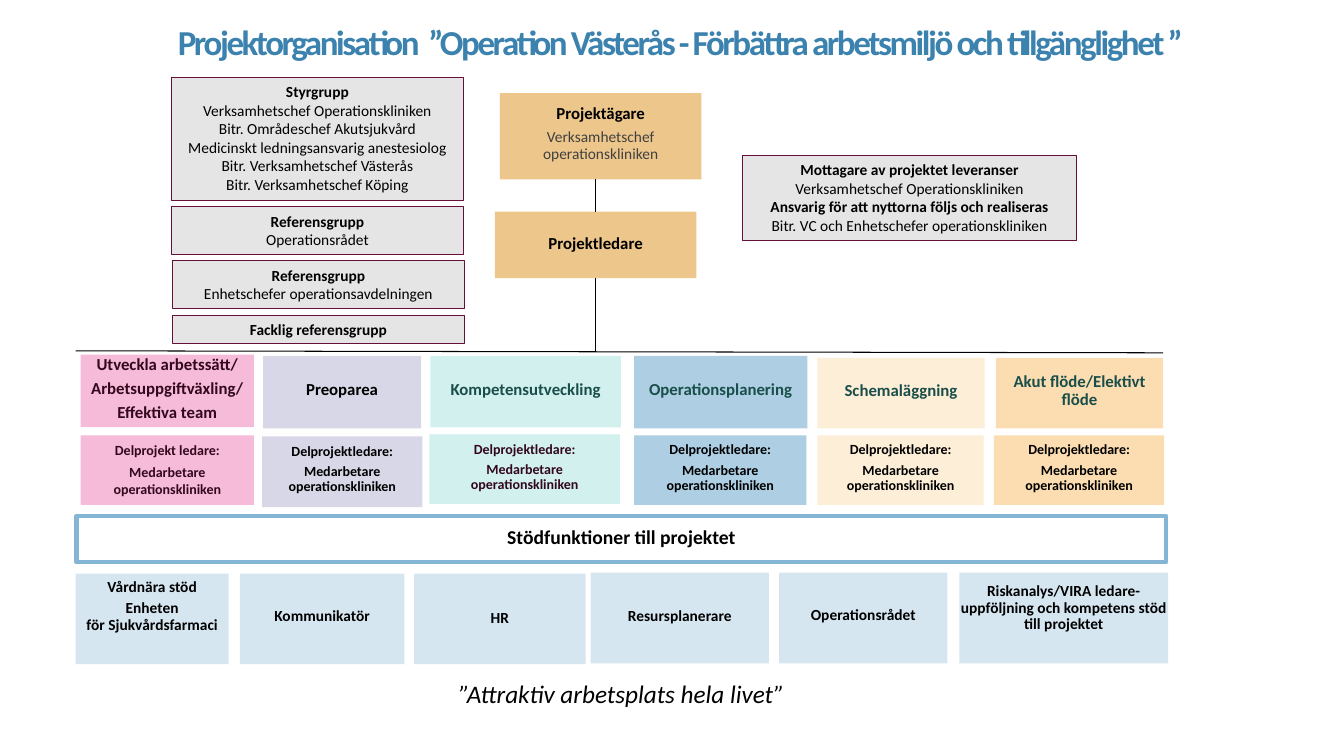
from lxml.etree import SubElement
from pptx import Presentation
from pptx.dml.color import RGBColor
from pptx.enum.shapes import MSO_CONNECTOR, MSO_SHAPE
from pptx.enum.text import MSO_ANCHOR, PP_ALIGN
from pptx.oxml.ns import qn
from pptx.util import Pt

FONT = "Calibri"
COLOURS = {
    "title": "3C82AF", "black": "000000", "grey_text": "404040",
    "plum": "33081E", "teal": "1A4E4A", "group": "E5E5E5",
    "group_edge": "670F3B", "lead": "DA860B", "frame": "84B5D5",
    "support": "D6E6F1", "pink": "F5BBD8", "lilac": "D8D7E8",
    "mint": "D1F0EE", "blue": "ADCEE3", "cream": "FDEED8", "peach": "FBDDB1",
}

TITLE = "Projektorganisation  ”Operation Västerås - Förbättra arbetsmiljö och tillgänglighet ”"
SLOGAN = "”Attraktiv arbetsplats hela livet”"
SUPPORT_HEADING = "Stödfunktioner till projektet"
OWNER = ("Projektägare", "Verksamhetschef operationskliniken")
LEADER = "Projektledare"
MEMBERS = "Medarbetare\noperationskliniken"

GROUPS = [
    (122.4, [("Styrgrupp", True), ("Verksamhetschef Operationskliniken", False),
             ("Bitr. Områdeschef Akutsjukvård", False),
             ("Medicinskt ledningsansvarig anestesiolog", False),
             ("Bitr. Verksamhetschef Västerås", False),
             ("Bitr. Verksamhetschef Köping", False)]),
    (122.4, [("Referensgrupp", True), ("Operationsrådet", False)]),
    (123.1, [("Referensgrupp", True), ("Enhetschefer operationsavdelningen", False)]),
    (123.1, [("Facklig referensgrupp", True)]),
]
RECEIVERS = [
    ("Mottagare av projektet leveranser", True),
    ("Verksamhetschef Operationskliniken", False),
    ("Ansvarig för att nyttorna följs och realiseras", True),
    ("Bitr. VC och Enhetschefer operationskliniken", False),
]

STREAMS = [
    ("pink", ["Utveckla arbetssätt/", "Arbetsuppgiftväxling/", "Effektiva team"], "plum",
     (57.6, 253.4, 123.8, 51.8), "Delprojekt ledare:", "plum", (57.6, 311, 123.8, 49.7), 1, 0.4),
    ("lilac", ["Preoparea"], "black",
     (187.9, 254.2, 113, 51.8), "Delprojektledare:", "black", (187.2, 311.8, 114.5, 50.4), 0.9, 1.5),
    ("mint", ["Kompetensutveckling"], "teal",
     (307.4, 254.2, 136.1, 51.1), "Delprojektledare:", "plum", (306.7, 310.3, 136.1, 49.7), 0.9, 1.5),
    ("blue", ["Operationsplanering"], "teal",
     (452.9, 254.2, 123.8, 51.8), "Delprojektledare:", "black", (452.9, 311, 123.1, 49.7), 0.9, 1.5),
    ("cream", ["Schemaläggning"], "teal",
     (583.9, 255.6, 119.5, 50.4), "Delprojektledare:", "black", (583.9, 311, 118.8, 49.7), 0.9, 1.5),
    ("peach", ["Akut flöde/Elektivt flöde"], "teal",
     (711.4, 255.6, 119.5, 50.4), "Delprojektledare:", "black", (709.9, 311, 121.7, 49.7), 0.9, 1.5),
]

SUPPORT = [
    (54, 409.7, 109.4, ["Vårdnära stöd", "Enheten\nför Sjukvårdsfarmaci"], 9),
    (171.4, 409.7, 117.4, ["Kommunikatör"], 1.5),
    (295.9, 409.7, 122.4, ["HR"], 0),
    (421.9, 409, 127.4, ["Resursplanerare"], 0.7),
    (556.6, 409, 120.2, ["Operationsrådet"], 1.5),
    (685.4, 409, 149, ["Riskanalys/VIRA ledare- uppföljning och kompetens stöd till projektet"], 7),
]

prs = Presentation()
prs.slide_width, prs.slide_height = Pt(960), Pt(540)
slide = prs.slides.add_slide(prs.slide_layouts[6])


def line_of(text, size, colour="black", bold=True, italic=False):
    return text, size, colour, bold, italic


def write(owner, lines, insets, anchor=MSO_ANCHOR.MIDDLE, spacing=1, gap=0):
    frame = owner.text_frame
    frame.word_wrap = True
    frame.vertical_anchor = anchor
    (frame.margin_left, frame.margin_top,
     frame.margin_right, frame.margin_bottom) = map(Pt, insets)
    for index, (text, size, colour, bold, italic) in enumerate(lines):
        paragraph = frame.paragraphs[0] if index == 0 else frame.add_paragraph()
        paragraph.alignment = PP_ALIGN.CENTER
        paragraph.line_spacing = spacing
        paragraph.space_after = Pt(round(size * gap, 1) if index < len(lines) - 1 else 0)
        for part_index, part in enumerate(text.split("\n")):
            if part_index:
                paragraph.add_line_break()
            run = paragraph.add_run()
            run.text = part
            font = run.font
            font.name, font.size, font.bold, font.italic = FONT, Pt(size), bold, italic
            font.color.rgb = RGBColor.from_string(COLOURS[colour])


def rectangle(place, fill=None, edge=None, edge_width=0.75):
    box = slide.shapes.add_shape(MSO_SHAPE.RECTANGLE, *map(Pt, place))
    box.shadow.inherit = False
    if fill:
        box.fill.solid()
        box.fill.fore_color.rgb = RGBColor.from_string(COLOURS[fill])
    else:
        box.fill.background()
    if edge:
        box.line.color.rgb = RGBColor.from_string(COLOURS[edge])
        box.line.width = Pt(edge_width)
    else:
        box.line.fill.background()
    return box


def card(place, fill, lines, lift=1.5, spacing=0.9, **edge):
    box = rectangle(place, fill, **edge)
    write(box, lines, (0.7, 0.7, 0.7, 0.7 + 2 * lift), spacing=spacing, gap=0.35)
    return box


def group_box(left, top, width, members):
    height = 7.2 + 13.4 * len(members)
    box = rectangle((left, top, width, height), "group", "group_edge")
    write(box, [line_of(text, 11, bold=bold) for text, bold in members],
          (7.2, 3.6, 7.2, 3.6), MSO_ANCHOR.TOP)
    return height


def lead_card(place, lines, lift):
    box = card(place, "lead", lines, lift)
    tint = box.fill._xPr.find(qn("a:solidFill"))[0]
    SubElement(tint, qn("a:alpha")).set("val", "47000")
    return box


def connect(start_x, start_y, end_x, end_y):
    link = slide.shapes.add_connector(
        MSO_CONNECTOR.STRAIGHT, Pt(start_x), Pt(start_y), Pt(end_x), Pt(end_y))
    link.line.color.rgb = RGBColor.from_string(COLOURS["black"])
    link.line.width = Pt(0.75)
    SubElement(link._element.spPr, qn("a:effectLst"))
    return link


heading = slide.shapes.add_textbox(Pt(31.7), Pt(8.6), Pt(901.4), Pt(39.6))
write(heading, [line_of(TITLE, 25, "title")], (7.2, 0, 0, 3.6), MSO_ANCHOR.BOTTOM, 0.85)
heading.text_frame.paragraphs[0].runs[0].font._element.set("spc", "-170")

slogan = slide.shapes.add_textbox(Pt(167.8), Pt(481), Pt(553), Pt(28.8))
write(slogan, [line_of(SLOGAN, 18, bold=False, italic=True)],
      (7.2, 3.6, 7.2, 3.6), MSO_ANCHOR.TOP)

group_top = 55.4
for left, members in GROUPS:
    group_top += group_box(left, group_top, 208.8, members) + 4.7
group_box(530.6, 110.9, 238.3, RECEIVERS)

lead_card((357.1, 66.5, 144, 61.7),
          [line_of(OWNER[0], 12), line_of(OWNER[1], 11, "grey_text", False)], 1.8)
leader = lead_card((353.5, 151.2, 144, 47.5), [line_of(LEADER, 12)], 0.7)
connect(425.5, 128.2, 425.5, 151.2).end_connect(leader, 0)
connect(425.5, 198.7, 425.5, 250.6).begin_connect(leader, 2)
connect(54, 250.6, 830.9, 252)

for fill, names, name_ink, name_place, role, role_ink, role_place, spacing, lift in STREAMS:
    card(name_place, fill, [line_of(name, 12, name_ink) for name in names])
    card(role_place, fill, [line_of(text, 10, role_ink) for text in (role, MEMBERS)],
         lift, spacing)

card((54.7, 368.6, 778.3, 33.1), None, [line_of(SUPPORT_HEADING, 14)], 0.7,
     edge="frame", edge_width=3)
for left, top, width, names, lift in SUPPORT:
    card((left, top, width, 64.8), "support", [line_of(name, 11) for name in names], lift)

prs.save("out.pptx")
